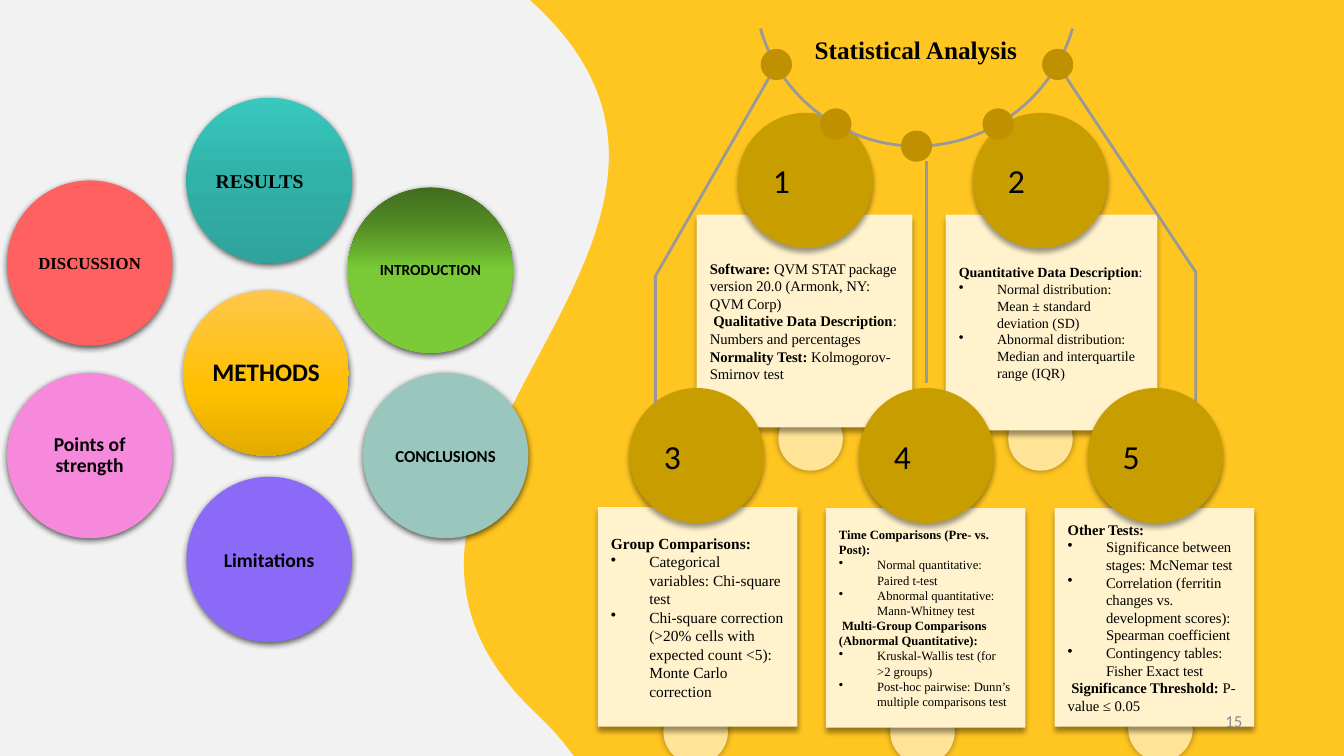
import math
from typing import NamedTuple

from lxml import etree
from pptx import Presentation
from pptx import util as u
from pptx.dml.color import RGBColor
from pptx.enum import shapes, text
from pptx.oxml.ns import qn

SCALE = 9144  # EMU in one px, 100 px to the inch
WIDTH, HEIGHT = 1333, 750

PAPER = RGBColor(0xF2, 0xF2, 0xF2)
AMBER = RGBColor(0xFF, 0xC6, 0x21)
CREAM = RGBColor(0xFF, 0xF2, 0xCC)
PALE_GOLD = RGBColor(0xFF, 0xE4, 0x97)
OCHRE = RGBColor(0xC8, 0x9D, 0x00)
BEAD = RGBColor(0xBF, 0x90, 0x00)
STRING = RGBColor(0x99, 0x99, 0x99)
PAGE_GREY = RGBColor(0x8C, 0x8C, 0x8C)
BLACK = RGBColor(0, 0, 0)
CORAL = RGBColor(0xFF, 0x60, 0x60)
SAGE = RGBColor(0x99, 0xC7, 0xBD)
VIOLET = RGBColor(0x8B, 0x6A, 0xF7)
PINK = RGBColor(0xF6, 0x89, 0xDC)
GOLDS = ((0, RGBColor(0xFF, 0xC6, 0x4B)), (60, RGBColor(0xFF, 0xC0, 0x00)),
         (100, RGBColor(0xE3, 0xAB, 0x00)))
GREENS = ((0, RGBColor(0x41, 0x6D, 0x1D)), (21, RGBColor(0x51, 0x88, 0x24)),
          (50, RGBColor(0x79, 0xCA, 0x36)), (100, RGBColor(0x7B, 0xCB, 0x39)))
TEALS = ((0, RGBColor(0x38, 0xC8, 0xBE)), (50, RGBColor(0x31, 0xB1, 0xA8)),
         (100, RGBColor(0x2E, 0xA4, 0x9C)))

SERIF, SANS = "Times New Roman", "Calibri"
LEFT, CENTER, RIGHT = text.PP_ALIGN.LEFT, text.PP_ALIGN.CENTER, text.PP_ALIGN.RIGHT
OVAL, RECT = shapes.MSO_SHAPE.OVAL, shapes.MSO_SHAPE.RECTANGLE


class Shadow(NamedTuple):
    alpha: int
    blur: float
    dist: float


class Topic(NamedTuple):
    label: str
    cx: int
    cy: int
    fill: RGBColor | tuple
    size: int
    font: str = SANS
    inset: int = 5
    spacing: float = 1.0
    align: text.PP_ALIGN = CENTER


class Line(NamedTuple):
    """A paragraph with a bold lead; without a lead it is a bullet."""
    lead: str
    rest: str = ""


class Card(NamedTuple):
    number: int
    box: tuple
    badge: tuple
    tab: tuple
    size: float
    lines: list


TOPIC_SHADOW, CARD_SHADOW, TAB_SHADOW = Shadow(63, 4.5, 1.5), Shadow(40, 4, 3), Shadow(40, 5, 0)

TOPICS = [
    Topic("DISCUSSION", 89, 261, CORAL, 12, SERIF),
    Topic("METHODS", 264, 370, GOLDS, 18, inset=0, spacing=0.9),
    Topic("CONCLUSIONS", 442, 452, SAGE, 12),
    Topic("Limitations", 267, 555, VIOLET, 14, inset=9),
    Topic("Points of strength", 89, 452, PINK, 14, inset=9, spacing=0.9),
    Topic("INTRODUCTION", 427, 268, GREENS, 11, spacing=0.9),
    Topic("RESULTS", 267, 179, TEALS, 14, SERIF, align=LEFT),
]

CARDS = [
    Card(1, (691, 213, 214, 211), (799, 179), (804, 435), 10.5, [
        Line("Software:", " QVM STAT package version 20.0 (Armonk, NY: QVM Corp)"),
        Line(" Qualitative Data Description", ": Numbers and percentages"),
        Line("Normality Test:", " Kolmogorov-Smirnov test")]),
    Card(2, (938, 213, 210, 214), (1032, 179), (1032, 435), 10, [
        Line("Quantitative Data Description", ":"),
        Line("", "Normal distribution: Mean ± standard deviation (SD)"),
        Line("", "Abnormal distribution: Median and interquartile range (IQR)")]),
    Card(3, (593, 503, 198, 218), (691, 452), (690, 726), 11, [
        Line("Group Comparisons:"),
        Line("", "Categorical variables: Chi-square test"),
        Line("", "Chi-square correction (>20% cells with expected count <5): "
                 "Monte Carlo correction")]),
    Card(4, (819, 504, 198, 218), (919, 452), (915, 726), 9, [
        Line("Time Comparisons (Pre- vs. Post):"),
        Line("", "Normal quantitative: Paired t-test"),
        Line("", "Abnormal quantitative: Mann-Whitney test"),
        Line(" Multi-Group Comparisons (Abnormal Quantitative):"),
        Line("", "Kruskal-Wallis test (for >2 groups)"),
        Line("", "Post-hoc pairwise: Dunn’s multiple comparisons test")]),
    Card(5, (1046, 504, 198, 217), (1146, 452), (1151, 723), 10.5, [
        Line("Other Tests:"),
        Line("", "Significance between stages: McNemar test"),
        Line("", "Correlation (ferritin changes vs. development scores): "
                 "Spearman coefficient"),
        Line("", "Contingency tables: Fisher Exact test"),
        Line(" Significance Threshold:", " P-value ≤ 0.05")]),
]

ARC_X, ARC_Y, ARC_R = 909, -16, 161
BEADS = [(770, 64), (829, 123), (909, 145), (990, 123), (1049, 64)]
HANGERS = [[(768, 68), (650, 274), (650, 406)], [(1049, 64), (1186, 270), (1186, 403)]]


def px(n: float) -> int:
    return round(n * SCALE)


def style_run(r, font: str, size: float, bold: bool = False, color: RGBColor = BLACK) -> None:
    r.font.name, r.font.size, r.font.bold = font, u.Pt(size), bold
    r.font.color.rgb = color


def set_frame(tf, left: int, right: int, anchor=text.MSO_ANCHOR.MIDDLE) -> None:
    tf.margin_left, tf.margin_right = px(left), px(right)
    tf.margin_top = tf.margin_bottom = px(5)
    tf.vertical_anchor, tf.word_wrap = anchor, True
    tf.auto_size = text.MSO_AUTO_SIZE.NONE


def write(tf, words: str, font: str, size: float, align, bold: bool = False,
          color: RGBColor = BLACK, spacing: float = 1.0) -> None:
    tf.text = words
    p = tf.paragraphs[0]
    p.alignment, p.line_spacing = align, spacing
    style_run(p.runs[0], font, size, bold, color)


def paint(sp, fill: RGBColor | tuple) -> None:
    """Fill with one colour, or with (percent, colour) stops from top to bottom."""
    if isinstance(fill, RGBColor):
        sp.fill.solid()
        sp.fill.fore_color.rgb = fill
        return
    sp.fill.gradient()
    sp.fill.gradient_angle = 270
    stops = sp.element.spPr.find(".//" + qn("a:gsLst"))
    stops.clear()
    for percent, color in fill:
        stop = etree.SubElement(stops, qn("a:gs"), pos=str(percent * 1000))
        etree.SubElement(stop, qn("a:srgbClr"), val=str(color))


def add_block(slide, kind, box: tuple, fill: RGBColor | tuple, shadow: Shadow | None = None):
    sp = slide.shapes.add_shape(kind, *map(px, box))
    paint(sp, fill)
    sp.line.fill.background()
    sp.shadow.inherit = False
    if shadow:
        effects = sp.element.spPr.find(qn("a:effectLst"))
        outer = etree.SubElement(effects, qn("a:outerShdw"), blurRad=str(u.Pt(shadow.blur)),
                                 dist=str(u.Pt(shadow.dist)), dir="5400000", rotWithShape="0")
        color = etree.SubElement(outer, qn("a:srgbClr"), val=str(BLACK))
        etree.SubElement(color, qn("a:alpha"), val=str(shadow.alpha * 1000))
    return sp


def add_disc(slide, center: tuple, size: int, fill: RGBColor | tuple, shadow: Shadow | None = None):
    cx, cy = center
    return add_block(slide, OVAL, (cx - size / 2, cy - size / 2, size, size), fill, shadow)


def add_outline(slide, points: list, close: bool = False):
    (x, y), *rest = [(px(a), px(b)) for a, b in points]
    builder = slide.shapes.build_freeform(x, y)
    builder.add_line_segments(rest, close=close)
    sp = builder.convert_to_shape()
    sp.shadow.inherit = False
    return sp


def draw_string(line) -> None:
    line.color.rgb = STRING
    line.width = u.Pt(2)


def add_wave(slide) -> None:
    """Amber area whose left edge is a cubic wave with a period of 702 px."""
    edge = []
    for y in range(0, HEIGHT + 1, 5):
        t = (708 - y) / 702 % 1
        edge.append((532 + 747 * t * (1 - t) * (2 * t - 1), y))
    sp = add_outline(slide, edge + [(WIDTH, HEIGHT), (WIDTH, 0)], close=True)
    paint(sp, AMBER)
    sp.line.fill.background()


def add_topic(slide, topic: Topic) -> None:
    sp = add_disc(slide, (topic.cx, topic.cy), 164, topic.fill, TOPIC_SHADOW)
    set_frame(sp.text_frame, topic.inset, topic.inset)
    write(sp.text_frame, topic.label, topic.font, topic.size, topic.align, True,
          spacing=topic.spacing)


def add_card(slide, card: Card) -> None:
    add_disc(slide, card.tab, 64, PALE_GOLD, TAB_SHADOW)
    tf = add_block(slide, RECT, card.box, CREAM, CARD_SHADOW).text_frame
    set_frame(tf, 13, 13)
    for i, line in enumerate(card.lines):
        p = tf.add_paragraph() if i else tf.paragraphs[0]
        p.alignment = LEFT
        for words, bold in ((line.lead, True), (line.rest, False)):
            if words:
                r = p.add_run()
                r.text = words
                style_run(r, SERIF, card.size, bold)
        if not line.lead:
            props = p._p.get_or_add_pPr()
            props.set("marL", str(px(38)))
            props.set("indent", str(px(-38)))
            etree.SubElement(props, qn("a:buChar"), char="•")


def add_badge(slide, card: Card) -> None:
    tf = add_disc(slide, card.badge, 134, OCHRE, CARD_SHADOW).text_frame
    set_frame(tf, 0, 48)
    write(tf, str(card.number), SANS, 24, CENTER)


def add_necklace(slide) -> None:
    arc = [(ARC_X + ARC_R * math.cos(a), ARC_Y + ARC_R * math.sin(a))
           for a in (math.radians(d) for d in range(16, 165, 2))]
    for points in [arc, *HANGERS]:
        sp = add_outline(slide, points)
        sp.fill.background()
        draw_string(sp.line)
    cord = slide.shapes.add_connector(shapes.MSO_CONNECTOR.STRAIGHT,
                                      px(919), px(160), px(919), px(380))
    draw_string(cord.line)
    etree.SubElement(cord.element.spPr, qn("a:effectLst"))
    for center in BEADS:
        add_disc(slide, center, 31, BEAD)


def add_title(slide) -> None:
    title = slide.shapes.title
    title.left, title.top, title.width, title.height = map(px, (798, 32, 300, 65))
    set_frame(title.text_frame, 10, 10, text.MSO_ANCHOR.TOP)
    write(title.text_frame, "Statistical Analysis", SERIF, 18, LEFT, True, spacing=0.9)
    title.element.getparent().append(title.element)  # in front of the wave


def main() -> None:
    prs = Presentation()
    prs.slide_width, prs.slide_height = px(WIDTH), px(HEIGHT)
    slide = prs.slides.add_slide(prs.slide_layouts.get_by_name("Title Only"))
    slide.background.fill.solid()
    slide.background.fill.fore_color.rgb = PAPER
    add_wave(slide)
    for topic in TOPICS:
        add_topic(slide, topic)
    for card in CARDS:
        add_card(slide, card)
    for card in CARDS[:2]:
        add_badge(slide, card)
    add_necklace(slide)
    for card in CARDS[2:]:
        add_badge(slide, card)
    add_title(slide)
    page = slide.shapes.add_textbox(*map(px, (942, 695, 300, 40))).text_frame
    set_frame(page, 10, 10)
    write(page, "15", SANS, 12, RIGHT, color=PAGE_GREY)
    prs.save("out.pptx")


if __name__ == "__main__":
    main()
